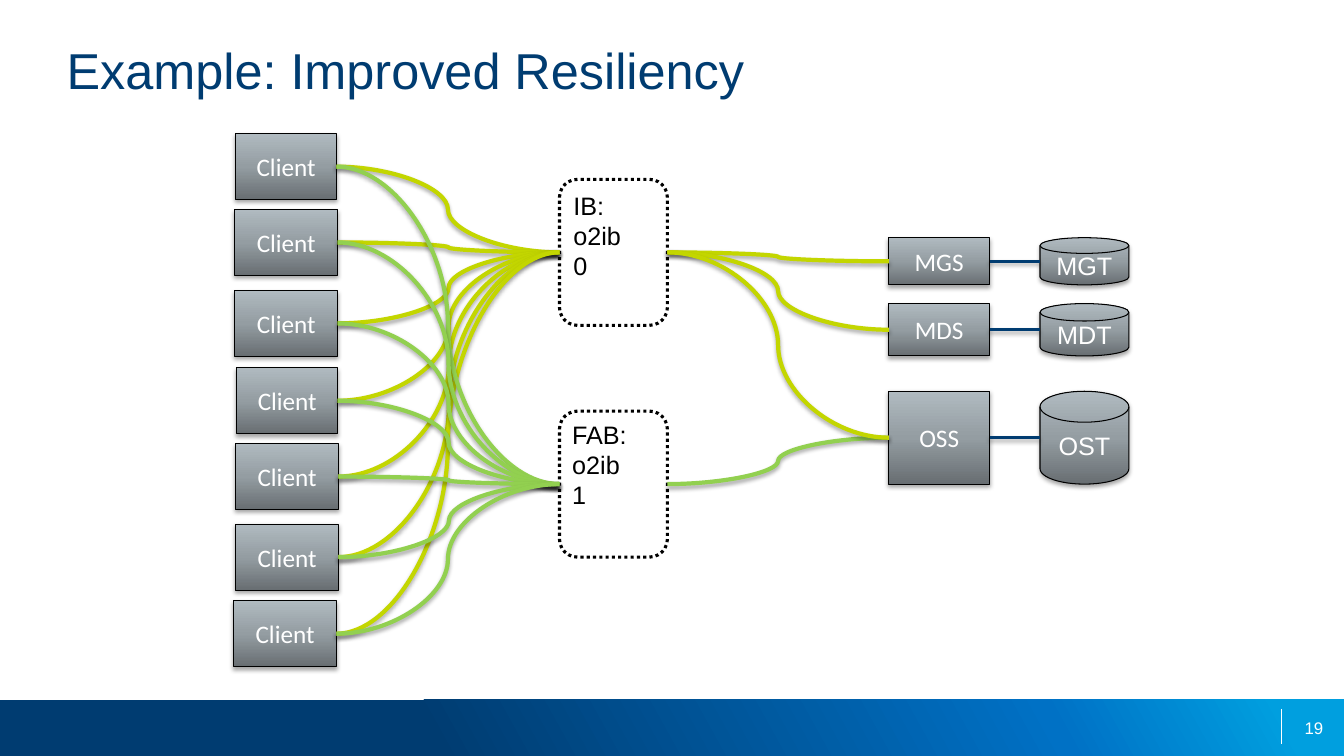
from pptx import Presentation
from pptx.dml.color import RGBColor
from pptx.enum.dml import MSO_LINE
from pptx.enum.shapes import MSO_CONNECTOR, MSO_SHAPE
from pptx.enum.text import MSO_ANCHOR, PP_ALIGN
from pptx.oxml import parse_xml
from pptx.oxml.ns import nsdecls
from pptx.util import Cm, Pt

NAVY, WHITE, BLACK = "003C71", "FFFFFF", "000000"
LIME, GREEN = "C3D600", "92D050"
STEEL = [(0, "686E72"), (50, "949DA2"), (100, "B0BAC0")]
OCEAN = [(32, NAVY), (78, "0071C5"), (95, "009FDF")]
SHADOW = (
    f'<a:effectLst {nsdecls("a")}><a:outerShdw blurRad="40000" dist="23000" dir="5400000" '
    'rotWithShape="0"><a:srgbClr val="000000"><a:alpha val="35000"/></a:srgbClr>'
    '</a:outerShdw></a:effectLst>'
)


def write_text(box, text, size=18, font="Arial", color=BLACK, align=PP_ALIGN.LEFT,
               anchor=MSO_ANCHOR.TOP, margin=None, wrap=True):
    frame = box.text_frame
    frame.word_wrap = wrap
    frame.vertical_anchor = anchor
    if margin is not None:
        frame.margin_left = frame.margin_right = Cm(margin)
        frame.margin_top = frame.margin_bottom = Cm(margin)
    for index, line in enumerate(text.split("\n")):
        para = frame.add_paragraph() if index else frame.paragraphs[0]
        para.alignment = align
        span = para.add_run()
        span.text = line
        span.font.size = Pt(size)
        span.font.name = font
        span.font.color.rgb = RGBColor.from_string(color)


def apply_gradient(shape, stops, angle):
    markup = "".join(
        f'<a:gs pos="{place * 1000}"><a:srgbClr val="{color}"/></a:gs>' for place, color in stops
    )
    shape._element.spPr.insert(2, parse_xml(
        f'<a:gradFill {nsdecls("a")} rotWithShape="1"><a:gsLst>{markup}</a:gsLst>'
        f'<a:lin ang="{angle * 60000}" scaled="0"/></a:gradFill>'
    ))


deck = Presentation()
deck.slide_width, deck.slide_height = Cm(33.87), Cm(19.05)
page = deck.slides.add_slide(deck.slide_layouts[6])
shapes = page.shapes

footer = shapes.add_shape(MSO_SHAPE.RECTANGLE, 0, Cm(17.63), Cm(33.87), Cm(1.42))
footer.shadow.inherit = False
footer.line.fill.background()
apply_gradient(footer, OCEAN, 331)

divider = shapes.add_connector(MSO_CONNECTOR.STRAIGHT, Cm(32.29), Cm(17.86), Cm(32.29), Cm(18.75))
divider.line.color.rgb = RGBColor.from_string(WHITE)
divider.line.width = Pt(0.75)
divider._element.spPr.append(parse_xml(f'<a:effectLst {nsdecls("a")}/>'))

number = shapes.add_textbox(Cm(32.08), Cm(18.08), Cm(1.27), Cm(0.51))
write_text(number, "19", size=12, color=WHITE, align=PP_ALIGN.RIGHT, margin=0)

title = shapes.add_textbox(Cm(1.68), Cm(0.99), Cm(30.48), Cm(1.7))
write_text(title, "Example: Improved Resiliency", size=36, color=NAVY, margin=0)

DISK, BLOCK = MSO_SHAPE.FLOWCHART_MAGNETIC_DISK, MSO_SHAPE.RECTANGLE
nodes = []
for server, disk, top, height in [
    ("MGS", "MGT", 5.99, 1.19),
    ("MDS", "MDT", 7.65, 1.32),
    ("OSS", "OST", 9.86, 2.34),
]:
    nodes.append((DISK, disk, 26.21, top, 2.24, height, "Arial"))
    nodes.append((BLOCK, server, 22.4, top, 2.54, height, "Calibri"))
for left, top, width in [
    (5.94, 3.37, 2.54),
    (5.92, 5.28, 2.59),
    (5.92, 7.32, 2.59),
    (5.97, 9.27, 2.54),
    (5.94, 11.18, 2.59),
    (5.94, 13.21, 2.59),
    (5.89, 15.14, 2.59),
]:
    nodes.append((BLOCK, "Client", left, top, width, 1.66, "Calibri"))

disks, servers, clients = [], [], []
for kind, label, left, top, width, height, font in nodes:
    node = shapes.add_shape(kind, Cm(left), Cm(top), Cm(width), Cm(height))
    node.line.color.rgb = RGBColor.from_string(BLACK)
    node.line.width = Pt(0.75)
    apply_gradient(node, STEEL, 270)
    node._element.spPr.append(parse_xml(SHADOW))
    write_text(node, label, font=font, color=WHITE, align=PP_ALIGN.CENTER,
               anchor=MSO_ANCHOR.MIDDLE)
    group = disks if kind == DISK else clients if label == "Client" else servers
    group.append(node)

networks = []
for label, top, text_left, text_top in [
    ("IB:\no2ib0", 4.52, 14.2, 4.67),
    ("FAB:\no2ib1", 10.36, 14.17, 10.44),
]:
    network = shapes.add_shape(MSO_SHAPE.ROUNDED_RECTANGLE, Cm(14.1), Cm(top), Cm(2.72), Cm(3.68))
    network.shadow.inherit = False
    network.fill.solid()
    network.fill.fore_color.rgb = RGBColor.from_string(WHITE)
    network.line.color.rgb = RGBColor.from_string(BLACK)
    network.line.width = Pt(2.25)
    network.line.dash_style = MSO_LINE.ROUND_DOT
    networks.append(network)
    caption = shapes.add_textbox(Cm(text_left), Cm(text_top), Cm(2.05), Cm(1.8))
    write_text(caption, label)

infiniband, fabric = networks
links = [(server, disk, NAVY) for server, disk in zip(servers, disks)]
links.append((fabric, servers[2], GREEN))
links += [(infiniband, server, LIME) for server in servers]
links += [(client, infiniband, LIME) for client in clients]
links += [(client, fabric, GREEN) for client in clients]
for source, target, color in links:
    straight = color == NAVY
    link = shapes.add_connector(
        MSO_CONNECTOR.STRAIGHT if straight else MSO_CONNECTOR.CURVE,
        source.left + source.width, source.top + source.height // 2,
        target.left, target.top + target.height // 2,
    )
    link.begin_connect(source, 3)
    if not straight:
        link.end_connect(target, 1)
    link.line.color.rgb = RGBColor.from_string(color)
    link.line.width = Pt(2 if straight else 3)
    link._element.spPr.append(parse_xml(SHADOW))

deck.save("out.pptx")
